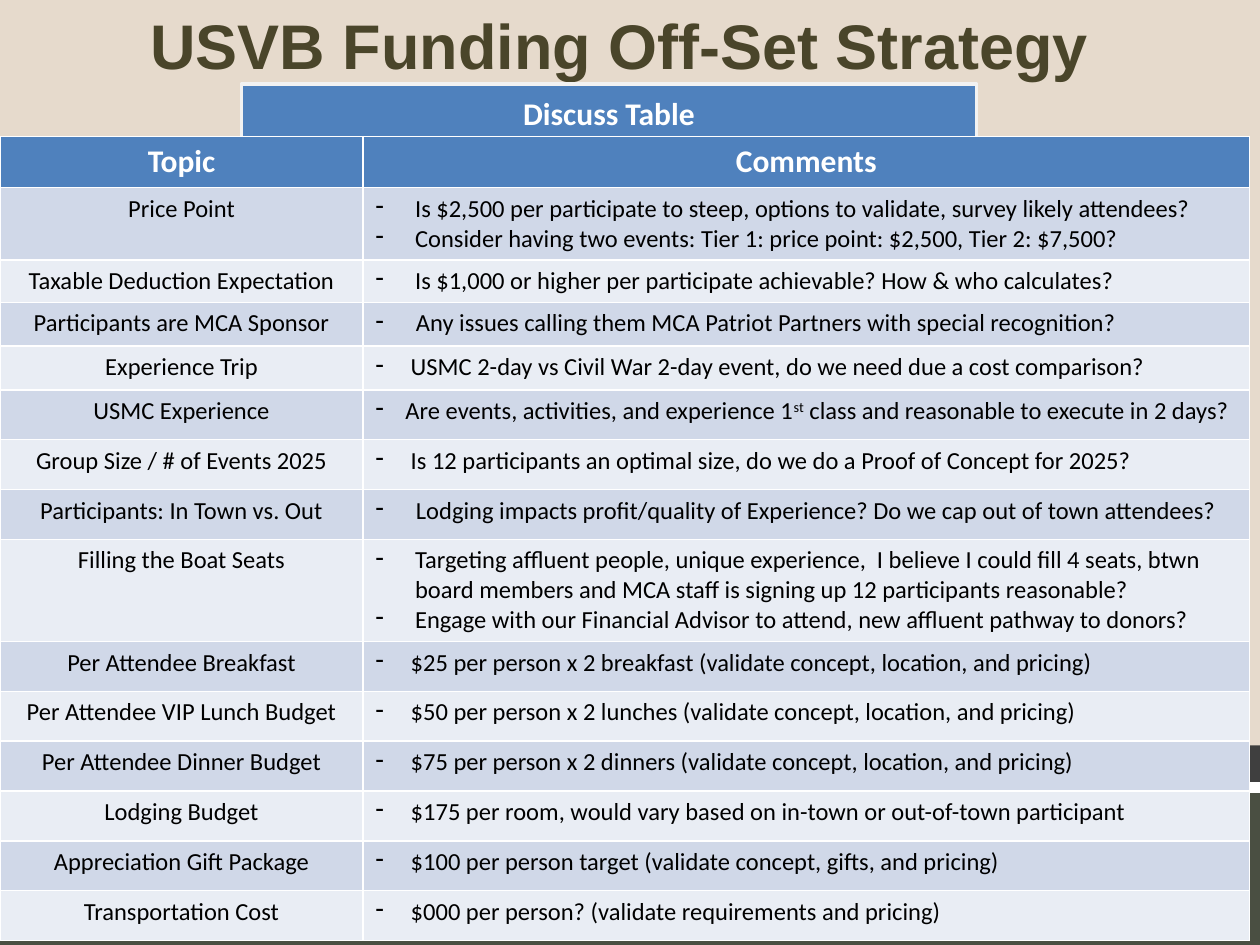
"""Build the funding off-set strategy slide with its discussion table."""
from lxml import etree
from pptx import Presentation
from pptx import util as u
from pptx.dml.color import RGBColor
from pptx.enum import shapes, text
from pptx.oxml.ns import qn

SAND = RGBColor(0xE6, 0xDA, 0xCC)
MOSS = RGBColor(0x4A, 0x4F, 0x42)
CHARCOAL = RGBColor(0x3F, 0x3F, 0x3F)
OLIVE = RGBColor(0x4A, 0x45, 0x2A)
BLUE = RGBColor(0x4F, 0x81, 0xBD)
PALE = RGBColor(0xF2, 0xF2, 0xF2)
WHITE = RGBColor(0xFF, 0xFF, 0xFF)
BLACK = RGBColor(0x00, 0x00, 0x00)
BANDS = [RGBColor(0xD0, 0xD8, 0xE8), RGBColor(0xE9, 0xED, 0xF4)]

ROWS = [
    ("Price Point", 40.5, 22.5, [
        "Is $2,500 per participate to steep, options to validate, survey likely attendees?",
        "Consider having two events: Tier 1: price point: $2,500, Tier 2: $7,500?"]),
    ("Taxable Deduction Expectation", 24, 22.5, [
        "Is $1,000 or higher per participate achievable? How & who calculates?"]),
    ("Participants are MCA Sponsor", 25, 23, [
        "Any issues calling them MCA Patriot Partners with special recognition?"]),
    ("Experience Trip", 25, 20, [
        "USMC 2-day vs Civil War 2-day event, do we need due a cost comparison?"]),
    ("USMC Experience", 28.5, 17, [
        "Are events, activities, and experience 1^st^ class and reasonable to execute in 2 days?"]),
    ("Group Size / # of Events 2025", 28.5, 20, [
        "Is 12 participants an optimal size, do we do a Proof of Concept for 2025?"]),
    ("Participants: In Town vs. Out", 28.5, 23, [
        "Lodging impacts profit/quality of Experience? Do we cap out of town attendees?"]),
    ("Filling the Boat Seats", 57.5, 22.5, [
        "Targeting affluent people, unique experience,  I believe I could fill 4 seats, btwn "
        "board members and MCA staff is signing up 12 participants reasonable?",
        "Engage with our Financial Advisor to attend, new affluent pathway to donors?"]),
    ("Per Attendee Breakfast", 28.5, 20, [
        "$25 per person x 2 breakfast (validate concept, location, and pricing)"]),
    ("Per Attendee VIP Lunch Budget", 28.5, 20, [
        "$50 per person x 2 lunches (validate concept, location, and pricing)"]),
    ("Per Attendee Dinner Budget", 28.5, 20, [
        "$75 per person x 2 dinners (validate concept, location, and pricing)"]),
    ("Lodging Budget", 28.5, 20, [
        "$175 per room, would vary based on in-town or out-of-town participant"]),
    ("Appreciation Gift Package", 28.5, 20, [
        "$100 per person target (validate concept, gifts, and pricing)"]),
    ("Transportation Cost", 28.5, 20, [
        "$000 per person? (validate requirements and pricing)"]),
]


def write(frame, lines, size=14, font="Calibri", color=BLACK, bold=False, indent=None):
    """Fill a text frame; an indent makes a dash list, ^ marks enclose superscript."""
    for number, line in enumerate(lines):
        para = frame.add_paragraph() if number else frame.paragraphs[0]
        para.alignment = text.PP_ALIGN.LEFT if indent else text.PP_ALIGN.CENTER
        if indent:
            props = para._p.get_or_add_pPr()
            props.set("marL", str(u.Pt(indent)))
            props.set("indent", str(-u.Pt(indent)))
            etree.SubElement(props, qn("a:buChar")).set("char", "-")
        for position, part in enumerate(line.split("^")):
            span = para.add_run()
            span.text = part
            span.font.size = u.Pt(size)
            span.font.name = font
            span.font.bold = bold
            span.font.color.rgb = color
            if position % 2:
                span.font._element.set("baseline", "30000")


def add_box(page, left, top, width, height, fill):
    """Add a plain filled rectangle without outline or shadow."""
    box = page.shapes.add_shape(shapes.MSO_SHAPE.RECTANGLE, u.Pt(left), u.Pt(top),
                                u.Pt(width), u.Pt(height))
    box.shadow.inherit = False
    box.fill.solid()
    box.fill.fore_color.rgb = fill
    box.line.fill.background()
    return box


deck = Presentation()
deck.slide_width, deck.slide_height = u.Pt(720), u.Pt(540)
page = deck.slides.add_slide(deck.slide_layouts[5])

for top, height, fill in [(0, 480, SAND), (450, 90, MOSS), (426, 24, CHARCOAL)]:
    add_box(page, 0, top, 720, height, fill)
divider = page.shapes.add_connector(shapes.MSO_CONNECTOR.STRAIGHT,
                                    u.Pt(0), u.Pt(450), u.Pt(720), u.Pt(450))
divider.line.color.rgb = WHITE
divider.line.width = u.Pt(6)
etree.SubElement(divider._element.spPr, qn("a:effectLst"))

title = page.shapes.title
title.left, title.top, title.width, title.height = u.Pt(72), u.Pt(0), u.Pt(564), u.Pt(51)
title.text_frame.vertical_anchor = text.MSO_ANCHOR.TOP
title.text_frame.auto_size = text.MSO_AUTO_SIZE.NONE
write(title.text_frame, ["USVB Funding Off-Set Strategy"], size=36, font="Arial",
      color=OLIVE, bold=True)
divider._element.addnext(title._element)

banner = add_box(page, 138, 48, 420, 33, BLUE)
banner.line.color.rgb = PALE
banner.line.width = u.Pt(2)
banner.text_frame.vertical_anchor = text.MSO_ANCHOR.MIDDLE
write(banner.text_frame, ["Discuss Table"], size=18, color=WHITE, bold=True)

table = page.shapes.add_table(len(ROWS) + 1, 2, u.Pt(0), u.Pt(78), u.Pt(714), u.Pt(458)).table
table.columns[0].width, table.columns[1].width = u.Pt(207.5), u.Pt(506.5)
table.rows[0].height = u.Pt(28.5)
for cell, heading in zip(table.rows[0].cells, ["Topic", "Comments"]):
    cell.fill.solid()
    cell.fill.fore_color.rgb = BLUE
    write(cell.text_frame, [heading], size=18, color=WHITE, bold=True)
for number, (topic, height, indent, comments) in enumerate(ROWS, 1):
    table.rows[number].height = u.Pt(height)
    for cell in table.rows[number].cells:
        cell.fill.solid()
        cell.fill.fore_color.rgb = BANDS[(number - 1) % 2]
    write(table.cell(number, 0).text_frame, [topic])
    write(table.cell(number, 1).text_frame, comments, indent=indent)

deck.save("out.pptx")
